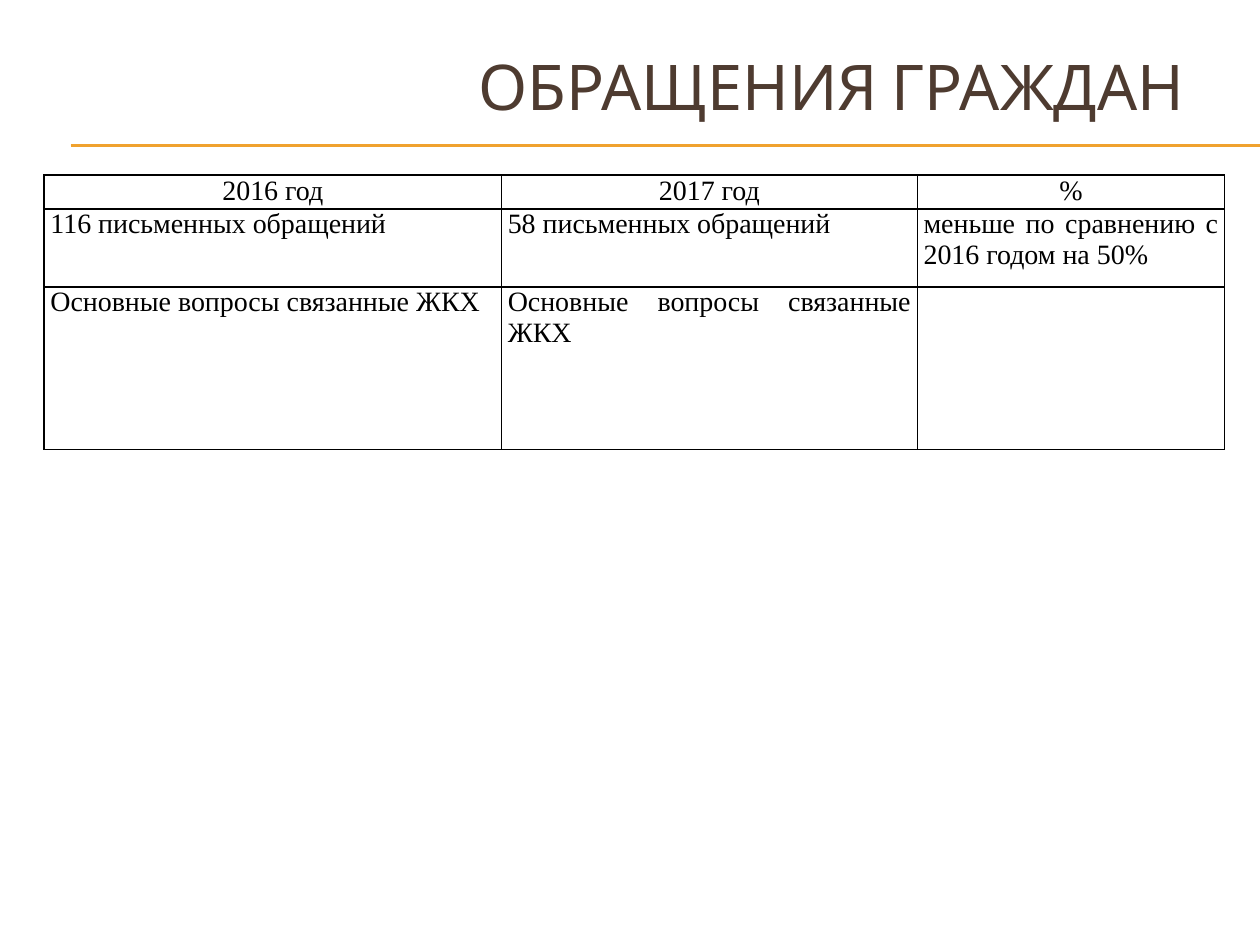
from lxml import etree
from pptx import Presentation
from pptx.dml.color import RGBColor
from pptx.enum.shapes import MSO_CONNECTOR
from pptx.enum.text import MSO_ANCHOR, PP_ALIGN
from pptx.oxml.ns import qn
from pptx.util import Inches, Pt

STRAIGHT = MSO_CONNECTOR.STRAIGHT
MIDDLE = MSO_ANCHOR.MIDDLE
CENTER, RIGHT, JUSTIFY = PP_ALIGN.CENTER, PP_ALIGN.RIGHT, PP_ALIGN.JUSTIFY

COLORS = {"title": "4E3B30", "rule": "F0A22E", "text": "000000", "border": "000000"}
TITLE = "ОБРАЩЕНИЯ ГРАЖДАН"
APPEALS = [
    ["2016 год", "2017 год", "%"],
    ["116 письменных обращений", "58 письменных обращений",
     "меньше по сравнению с 2016 годом на 50%"],
    ["Основные вопросы связанные ЖКХ", "Основные вопросы связанные ЖКХ", ""],
]
COLUMN_WIDTHS = [3.63, 3.3, 2.44]
ROW_HEIGHTS = [0.22, 0.62, 1.29]
RULE_LEVELS = [1.15, 1.16]
TITLE_FONT = {"name": "Cabin", "size": Pt(36)}
TABLE_FONT = {"name": "Times New Roman", "size": Pt(16)}
CELL_MARGINS = {"margin_left": Inches(0.05), "margin_right": Inches(0.05),
                "margin_top": 0, "margin_bottom": 0}


def write(frame, text, align, font_format, color):
    paragraph = frame.paragraphs[0]
    paragraph.alignment = align
    paragraph.text = text
    for attribute, value in font_format.items():
        setattr(paragraph.font, attribute, value)
    paragraph.font.color.rgb = RGBColor.from_string(color)
    for run in paragraph.runs:
        for attribute, value in font_format.items():
            setattr(run.font, attribute, value)
        run.font.color.rgb = RGBColor.from_string(color)


def add_borders(cell):
    properties = cell._tc.get_or_add_tcPr()
    for position, side in enumerate(("lnL", "lnR", "lnT", "lnB")):
        border = etree.Element(qn(f"a:{side}"), w=str(Pt(1)))
        fill = etree.SubElement(border, qn("a:solidFill"))
        etree.SubElement(fill, qn("a:srgbClr"), val=COLORS["border"])
        properties.insert(position, border)


presentation = Presentation()
presentation.slide_width, presentation.slide_height = Inches(10), Inches(7.5)
slide = presentation.slides.add_slide(presentation.slide_layouts[6])

for level in RULE_LEVELS:
    rule = slide.shapes.add_connector(
        STRAIGHT, Inches(0.56), Inches(level), Inches(10), Inches(level))
    rule.line.color.rgb = RGBColor.from_string(COLORS["rule"])
    rule.line.width = Pt(0.75)
    etree.SubElement(rule._element.spPr, qn("a:effectLst"))

title = slide.shapes.add_textbox(Inches(0.43), Inches(0.29), Inches(9.07), Inches(0.78))
title.text_frame.word_wrap = True
title.text_frame.vertical_anchor = MIDDLE
write(title.text_frame, TITLE, RIGHT, TITLE_FONT, COLORS["title"])

appeals = slide.shapes.add_table(
    len(ROW_HEIGHTS), len(COLUMN_WIDTHS), Inches(0.35), Inches(1.39),
    Inches(sum(COLUMN_WIDTHS)), Inches(sum(ROW_HEIGHTS))).table
for column, width in zip(appeals.columns, COLUMN_WIDTHS):
    column.width = Inches(width)
for row, height in zip(appeals.rows, ROW_HEIGHTS):
    row.height = Inches(height)
appeals.first_row = appeals.horz_banding = False

for row_index, texts in enumerate(APPEALS):
    for column_index, text in enumerate(texts):
        cell = appeals.cell(row_index, column_index)
        cell.fill.background()
        for attribute, value in CELL_MARGINS.items():
            setattr(cell, attribute, value)
        add_borders(cell)
        write(cell.text_frame, text, JUSTIFY if row_index else CENTER,
              TABLE_FONT, COLORS["text"])

presentation.save("out.pptx")
